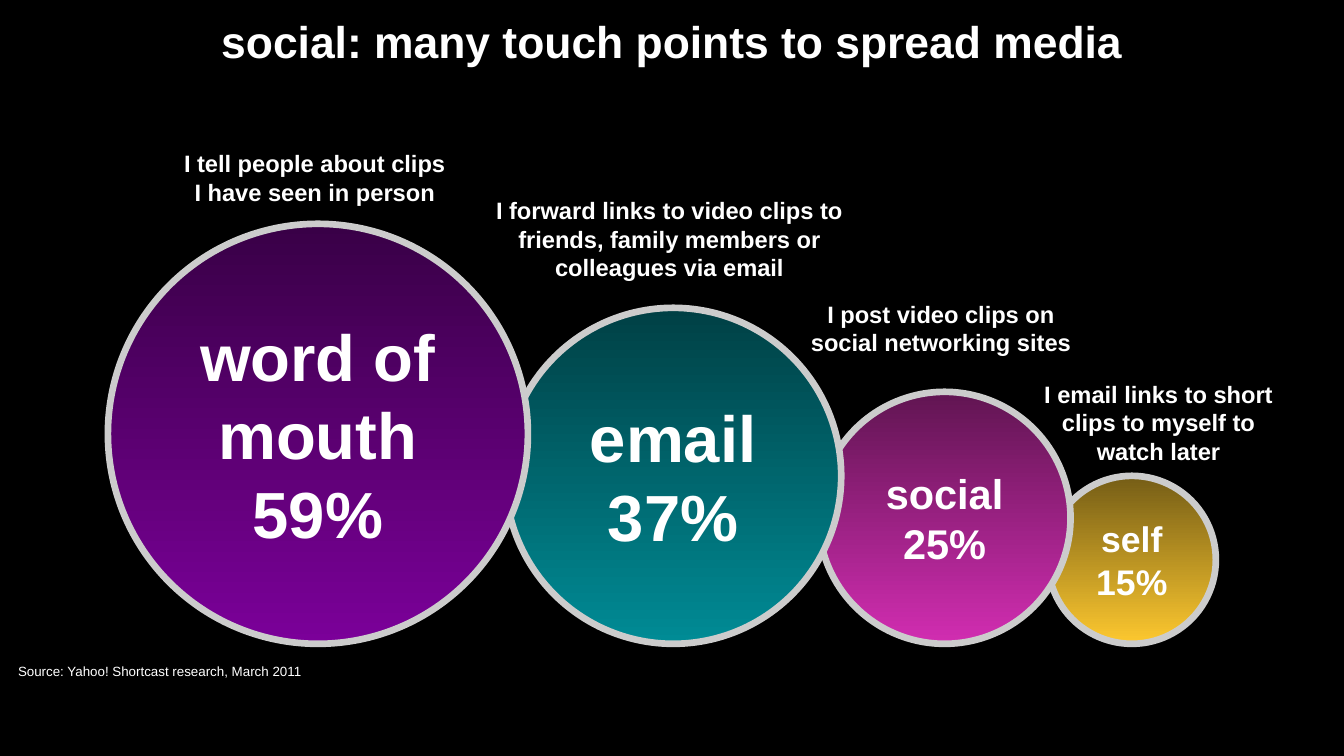
from dataclasses import dataclass

from pptx import Presentation
from pptx.dml.color import RGBColor
from pptx.enum.shapes import MSO_SHAPE
from pptx.enum.text import MSO_ANCHOR, PP_ALIGN
from pptx.slide import Slide
from pptx.text.text import TextFrame
from pptx.util import Cm, Pt

OVAL = MSO_SHAPE.OVAL
TOP, MIDDLE = MSO_ANCHOR.TOP, MSO_ANCHOR.MIDDLE
LEFT, CENTER = PP_ALIGN.LEFT, PP_ALIGN.CENTER

FONT = "Arial"
BLACK, WHITE, RING_GREY = "000000", "FFFFFF", "CCCCCC"
FIRST_CIRCLE_LEFT = 2.57
CIRCLE_BOTTOM = 15.33
CIRCLE_OVERLAP = 0.54


@dataclass
class Circle:
    label: str
    diameter: float
    size: int
    top_color: str
    bottom_color: str


@dataclass
class Caption:
    text: str
    left: float
    top: float
    width: float
    height: float
    size: int = 16
    bold: bool = True
    align: PP_ALIGN = CENTER
    anchor: MSO_ANCHOR = TOP
    wrap: bool = True


CIRCLES = [
    Circle("word of mouth\n59%", 10, 44, "390047", "7B0099"),
    Circle("email\n37%", 8, 44, "004045", "008B95"),
    Circle("social\n25%", 6, 28, "611552", "D12DB1"),
    Circle("self\n15%", 4, 24, "755D16", "FDC82F"),
]

CAPTIONS = [
    Caption("I tell people about clips\vI have seen in person",
            3.99, 3.43, 7.01, 1.65, wrap=False),
    Caption("I forward links to video clips to friends, family members or "
            "colleagues via email", 11.56, 4.55, 8.76, 2.36),
    Caption("I post video clips on social networking sites",
            18.72, 7.01, 7.37, 1.65),
    Caption("I email links to short clips to myself to watch later",
            24.18, 8.92, 6.81, 2.36),
    Caption("social: many touch points to spread media",
            1.6, 0.18, 28.8, 1.6, size=30, anchor=MIDDLE),
    Caption("Source: Yahoo! Shortcast research, March 2011",
            0.18, 15.67, 7.37, 0.64, size=9, bold=False, align=LEFT,
            wrap=False),
]


def color(value: str) -> RGBColor:
    return RGBColor.from_string(value)


def write_text(frame: TextFrame, text: str, size: int, bold: bool,
               align: PP_ALIGN, anchor: MSO_ANCHOR, wrap: bool) -> None:
    frame.text = text
    frame.word_wrap = wrap
    frame.vertical_anchor = anchor
    for paragraph in frame.paragraphs:
        paragraph.alignment = align
        for run in paragraph.runs:
            run.font.name = FONT
            run.font.size = Pt(size)
            run.font.bold = bold
            run.font.color.rgb = color(WHITE)


def draw_circle(slide: Slide, circle: Circle, left: float) -> None:
    shape = slide.shapes.add_shape(
        OVAL, Cm(left), Cm(CIRCLE_BOTTOM - circle.diameter),
        Cm(circle.diameter), Cm(circle.diameter))
    shape.shadow.inherit = False
    shape.fill.gradient()
    shape.fill.gradient_angle = 270
    stops = shape.fill.gradient_stops
    for stop, position, value in zip(
            stops, (0, 1), (circle.top_color, circle.bottom_color)):
        stop.position = position
        stop.color.rgb = color(value)
    shape.line.color.rgb = color(RING_GREY)
    shape.line.width = Pt(4.5)
    frame = shape.text_frame
    frame.margin_left = frame.margin_right = Cm(0)
    frame.margin_top = frame.margin_bottom = Cm(0)
    write_text(frame, circle.label, circle.size, True, CENTER, MIDDLE, True)


def draw_circles(slide: Slide) -> None:
    """Draw the row from right to left, so each larger circle lies on top."""
    lefts = []
    left = FIRST_CIRCLE_LEFT
    for circle in CIRCLES:
        lefts.append(left)
        left += circle.diameter - CIRCLE_OVERLAP
    for circle, left in reversed(list(zip(CIRCLES, lefts))):
        draw_circle(slide, circle, left)


def draw_caption(slide: Slide, caption: Caption) -> None:
    box = slide.shapes.add_textbox(Cm(caption.left), Cm(caption.top),
                                   Cm(caption.width), Cm(caption.height))
    write_text(box.text_frame, caption.text, caption.size, caption.bold,
               caption.align, caption.anchor, caption.wrap)


def main() -> None:
    presentation = Presentation()
    presentation.slide_width = Cm(32)
    presentation.slide_height = Cm(18)
    slide = presentation.slides.add_slide(presentation.slide_layouts[6])
    slide.background.fill.solid()
    slide.background.fill.fore_color.rgb = color(BLACK)
    draw_circles(slide)
    for caption in CAPTIONS:
        draw_caption(slide, caption)
    presentation.save("out.pptx")


if __name__ == "__main__":
    main()
